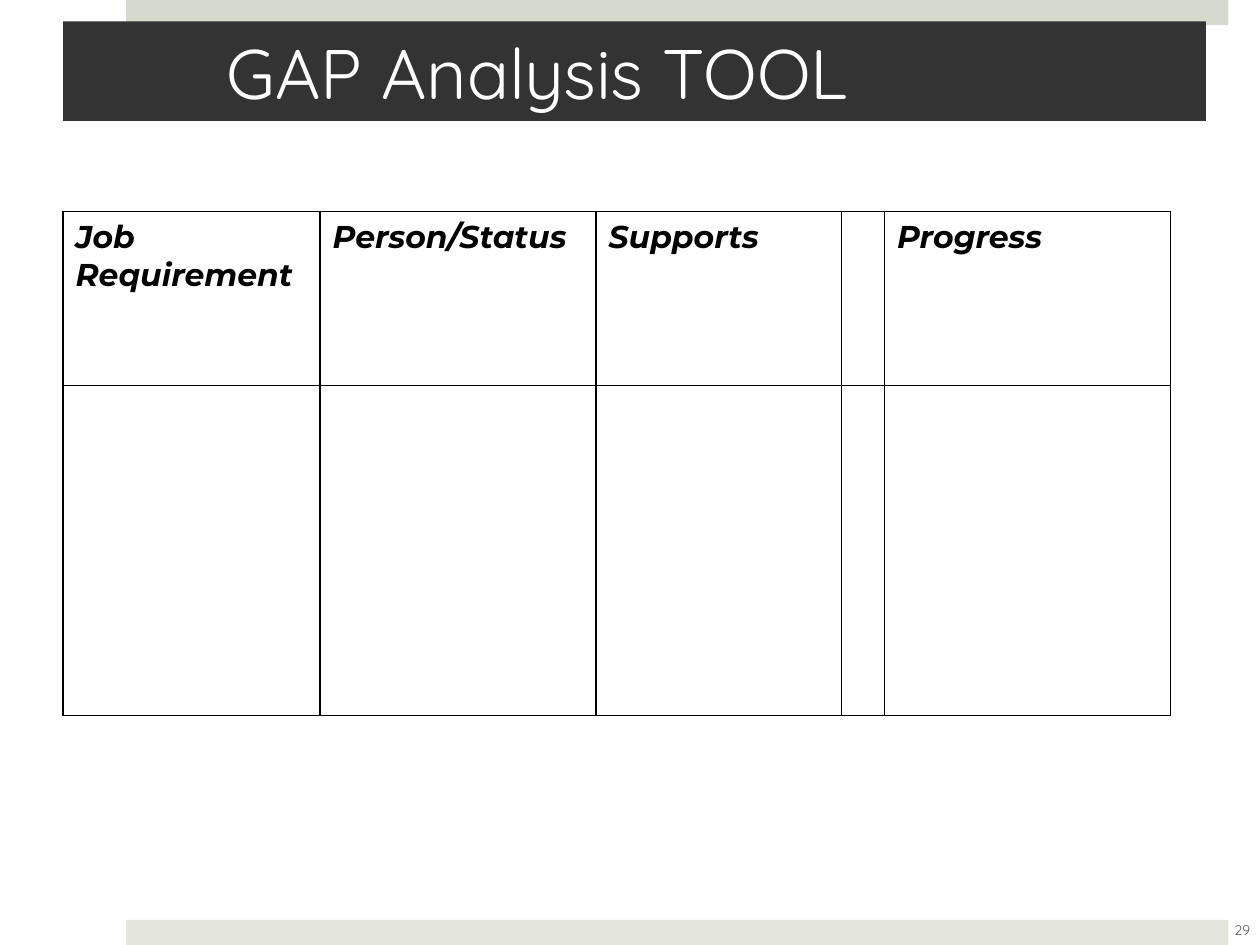
from lxml import etree
from pptx import Presentation
from pptx.dml.color import RGBColor
from pptx.enum.shapes import MSO_SHAPE
from pptx.enum.text import MSO_ANCHOR, MSO_AUTO_SIZE, PP_ALIGN
from pptx.oxml.ns import qn
from pptx.util import Inches, Pt

RECT = MSO_SHAPE.RECTANGLE
MIDDLE = MSO_ANCHOR.MIDDLE
NO_FIT = MSO_AUTO_SIZE.NONE
LEFT, CENTER = PP_ALIGN.LEFT, PP_ALIGN.CENTER

COLORS = {"top": "D6D9CD", "bottom": "E4E6DE", "title": "333333",
          "white": "FFFFFF", "black": "000000", "number": "595959"}
HEADS = ["Job Requirement", "Person/Status", "Supports", "", "Progress"]
COLS = [2.04, 2.19, 1.95, 0.34, 2.27]
ROWS = [1.38, 2.62]


def paint(fill, color):
    fill.solid()
    fill.fore_color.rgb = RGBColor.from_string(COLORS[color])


def write(frame, text, font, size, color, align=LEFT, bold=False, italic=False):
    para = frame.paragraphs[0]
    para.alignment = align
    run = para.add_run()
    run.text = text
    face = run.font
    face.name, face.size = font, Pt(size)
    face.bold, face.italic = bold, italic
    face.color.rgb = RGBColor.from_string(COLORS[color])


def add_bar(slide, box, color):
    """Add a plain band behind everything else."""
    bar = slide.shapes.add_shape(RECT, *map(Inches, box))
    bar.shadow.inherit = False
    paint(bar.fill, color)
    bar.line.fill.background()
    slide.shapes._spTree.insert(2, bar._element)


def set_title(slide, box, text):
    title = slide.shapes.title
    title.left, title.top, title.width, title.height = map(Inches, box)
    paint(title.fill, "title")
    frame = title.text_frame
    frame.word_wrap, frame.auto_size = True, NO_FIT
    frame.vertical_anchor = MIDDLE
    frame.margin_left, frame.margin_right = Inches(1.3), Inches(0.3)
    frame.margin_top = frame.margin_bottom = Inches(0.05)
    write(frame, text, "Quicksand", 40, "white")


def add_borders(cell):
    """Draw all four sides; they must come before the cell's fill."""
    props = cell._tc.get_or_add_tcPr()
    for i, side in enumerate(("a:lnL", "a:lnR", "a:lnT", "a:lnB")):
        line = etree.Element(qn(side), w=str(Pt(1)))
        solid = etree.SubElement(line, qn("a:solidFill"))
        etree.SubElement(solid, qn("a:srgbClr"), val=COLORS["black"])
        props.insert(i, line)


def add_grid(slide, left, top):
    frame = slide.shapes.add_table(
        len(ROWS), len(COLS), Inches(left), Inches(top),
        Inches(sum(COLS)), Inches(sum(ROWS)))
    table = frame.table
    table.first_row = table.horz_banding = False
    for col, width in zip(table.columns, COLS):
        col.width = Inches(width)
    for row, height in zip(table.rows, ROWS):
        row.height = Inches(height)
    for cell in table.iter_cells():
        cell.fill.background()
        add_borders(cell)
    for cell, head in zip(table.rows[0].cells, HEADS):
        if head:
            write(cell.text_frame, head, "Montserrat", 18, "black",
                  bold=True, italic=True)


def add_number(slide, box, text):
    frame = slide.shapes.add_textbox(*map(Inches, box)).text_frame
    frame.word_wrap = True
    frame.vertical_anchor = MIDDLE
    write(frame, text, "Quicksand", 8, "number", CENTER)


def main():
    deck = Presentation()
    deck.slide_width, deck.slide_height = Inches(10), Inches(7.5)
    slide = deck.slides.add_slide(deck.slide_layouts[5])
    add_bar(slide, (1, 0, 8.75, 0.2), "top")
    add_bar(slide, (1, 7.3, 8.75, 0.2), "bottom")
    set_title(slide, (0.5, 0.17, 9.07, 0.79), "GAP Analysis TOOL")
    add_grid(slide, 0.5, 1.68)
    add_number(slide, (9.61, 7.18, 0.5, 0.4), "29")
    deck.save("out.pptx")


if __name__ == "__main__":
    main()
